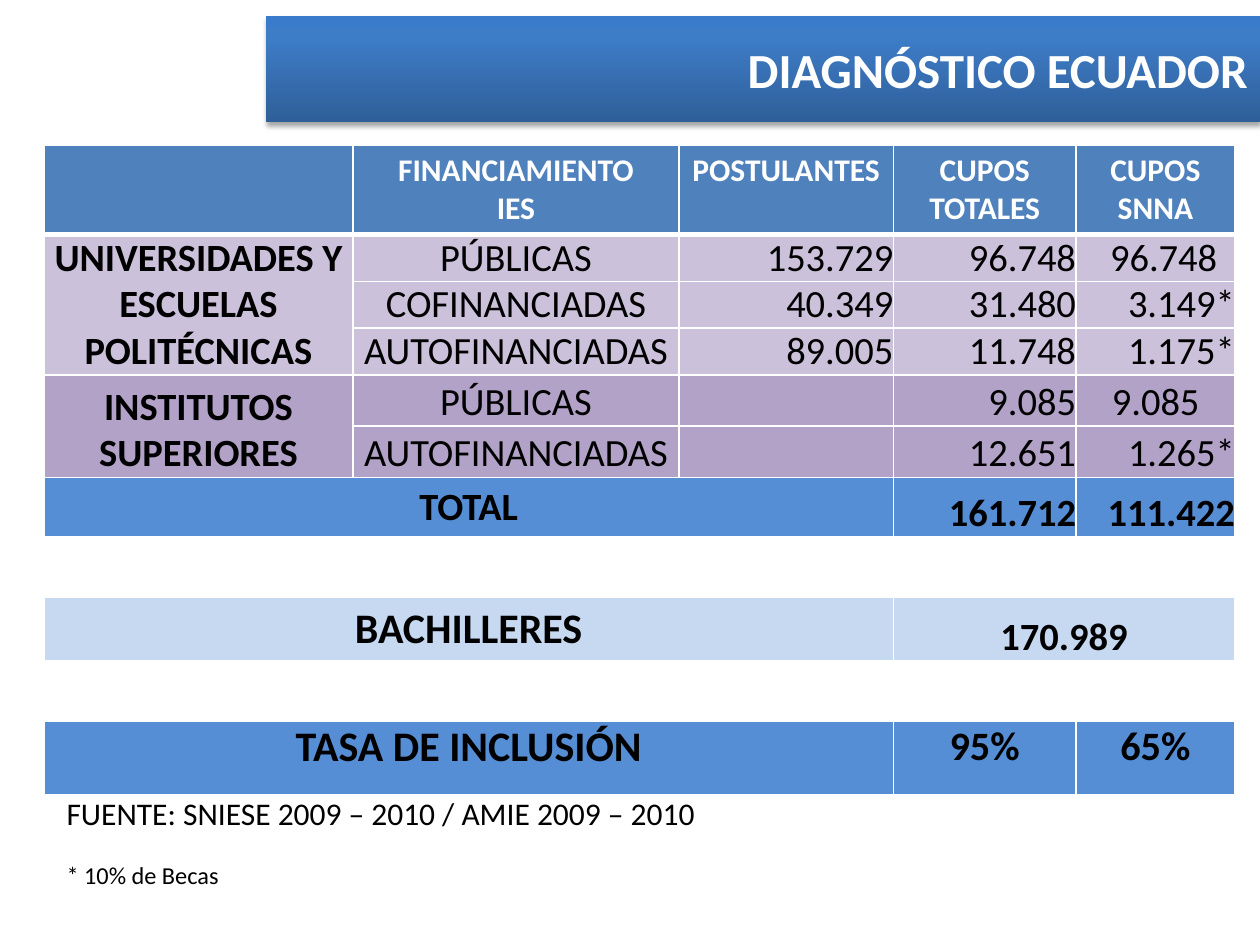
from lxml.etree import SubElement
from pptx import Presentation
from pptx.dml.color import RGBColor
from pptx.enum.shapes import MSO_SHAPE as Shape
from pptx.enum.text import MSO_ANCHOR as Anchor, PP_ALIGN as Align
from pptx.oxml import parse_xml
from pptx.oxml.ns import nsdecls, qn
from pptx.util import Inches, Pt

COLORS = {
    "white": "FFFFFF", "black": "000000", "header": "4F81BD",
    "university": "CCC1DA", "institute": "B3A2C7",
    "total": "558ED5", "graduates": "C6D9F1",
    "banner_dark": "2F5F99", "banner_mid": "3D7CC7", "banner_light": "3A7CCB",
}
COLUMN_WIDTHS = [2.45, 2.59, 1.7, 1.45, 1.26]
# Height, fill and cell texts of each row
ROWS = [
    (0.69, "header", ["", "FINANCIAMIENTO\nIES", "POSTULANTES", "CUPOS TOTALES", "CUPOS SNNA"]),
    (0.37, "university", ["UNIVERSIDADES Y ESCUELAS POLITÉCNICAS", "PÚBLICAS",
                          "153.729", "96.748", "96.748"]),
    (0.37, "university", ["", "COFINANCIADAS", "40.349", "31.480", "3.149*"]),
    (0.37, "university", ["", "AUTOFINANCIADAS", "89.005", "11.748", "1.175*"]),
    (0.37, "institute", ["INSTITUTOS SUPERIORES", "PÚBLICAS", "", "9.085", "9.085"]),
    (0.37, "institute", ["", "AUTOFINANCIADAS", "", "12.651", "1.265*"]),
    (0.46, "total", ["TOTAL", "", "", "161.712", "111.422"]),
    (0.48, "white", [""] * 5),
    (0.5, "graduates", ["BACHILLERES", "", "", "170.989", ""]),
    (0.48, None, [""] * 5),
    (0.58, "total", ["TASA DE INCLUSIÓN", "", "", "95%", "65%"]),
]
HEADER, TOTAL, GRADUATES, RATE = 0, 6, 8, 10
MERGES = [((1, 0), (3, 0)), ((4, 0), (5, 0)), ((TOTAL, 0), (TOTAL, 2)),
          ((GRADUATES, 0), (GRADUATES, 2)), ((GRADUATES, 3), (GRADUATES, 4)),
          ((RATE, 0), (RATE, 2))]
# Right insets that pull values without an asterisk away from the edge
RIGHT_INSETS = {(1, 4): 0.14, (4, 4): 0.28}


def rgb(name):
    return RGBColor.from_string(COLORS[name])


def write(para, text, size=18, color="black", bold=False, align=None, baseline=None):
    para.alignment = align
    span = para.add_run()
    span.text = text
    span.font.name = "Calibri"
    span.font.size = Pt(size)
    span.font.bold = bold
    span.font.color.rgb = rgb(color)
    if baseline is not None:
        span._r.get_or_add_rPr().set("baseline", str(baseline * 1000))


def write_lines(frame, text, **style):
    for index, line in enumerate(text.split("\n")):
        para = frame.add_paragraph() if index else frame.paragraphs[0]
        write(para, line, **style)


def add_borders(cell, top, bottom):
    """Draw white cell borders; top and bottom are widths in points."""
    properties = cell._tc.get_or_add_tcPr()
    for side, width in (("L", 1), ("R", 1), ("T", top), ("B", bottom)):
        line = SubElement(properties, qn(f"a:ln{side}"), w=str(Pt(width)))
        fill = SubElement(line, qn("a:solidFill"))
        SubElement(fill, qn("a:srgbClr"), val=COLORS["white"])


def cell_style(row, column):
    if row == HEADER:
        return {"size": 18, "color": "white", "bold": True, "align": Align.CENTER}
    centered = column < 2 or row in (GRADUATES, RATE)
    size = 22
    if row in (GRADUATES, RATE) and column == 0:
        size = 24
    elif row == RATE:
        size = 23
    return {"size": size, "bold": column == 0 or row >= TOTAL,
            "align": Align.CENTER if centered else Align.RIGHT}


def format_cell(cell, row, column, fill, text):
    add_borders(cell, top=3 if row == 1 else 1, bottom=3 if row == HEADER else 1)
    if fill:
        cell.fill.solid()
        cell.fill.fore_color.rgb = rgb(fill)
    else:
        cell.fill.background()
    padded = row == HEADER or (row in (TOTAL, GRADUATES) and column == 0)
    if text and not padded:
        cell.margin_left = cell.margin_top = cell.margin_bottom = 0
        cell.margin_right = Inches(RIGHT_INSETS.get((row, column), 0))
        cell.vertical_anchor = Anchor.TOP if row == RATE else Anchor.BOTTOM
    if text:
        write_lines(cell.text_frame, text, **cell_style(row, column))


def add_places_table(page):
    frame = page.shapes.add_table(
        len(ROWS), len(COLUMN_WIDTHS), Inches(0.35), Inches(1.15),
        Inches(sum(COLUMN_WIDTHS)), Inches(sum(row[0] for row in ROWS)))
    table = frame.table
    table.first_row = table.horz_banding = False
    for column, width in zip(table.columns, COLUMN_WIDTHS):
        column.width = Inches(width)
    for row, (height, fill, texts) in enumerate(ROWS):
        table.rows[row].height = Inches(height)
        for column, text in enumerate(texts):
            format_cell(table.cell(row, column), row, column, fill, text)
    for first, last in MERGES:
        table.cell(*first).merge(table.cell(*last))


def add_banner(page, text):
    banner = page.shapes.add_shape(
        Shape.ACTION_BUTTON_CUSTOM, Inches(2.11), Inches(0.13), Inches(7.89), Inches(0.84))
    banner.line.fill.background()
    banner.fill.gradient()
    properties = banner._element.spPr
    stops = "".join(
        f'<a:gs pos="{position * 1000}"><a:srgbClr val="{COLORS[name]}"/></a:gs>'
        for position, name in ((0, "banner_dark"), (80, "banner_mid"), (100, "banner_light")))
    properties.replace(properties.find(qn("a:gradFill")), parse_xml(
        f'<a:gradFill {nsdecls("a")} rotWithShape="1"><a:gsLst>{stops}</a:gsLst>'
        '<a:lin ang="16200000" scaled="0"/></a:gradFill>'))
    banner.shadow.inherit = False
    properties.find(qn("a:effectLst")).append(parse_xml(
        f'<a:outerShdw {nsdecls("a")} blurRad="{Pt(3.1)}" dist="{Pt(1.8)}" dir="5400000" '
        f'rotWithShape="0"><a:srgbClr val="{COLORS["black"]}"><a:alpha val="35000"/>'
        '</a:srgbClr></a:outerShdw>'))
    banner.text_frame.vertical_anchor = Anchor.MIDDLE
    write_lines(banner.text_frame, text, size=28, color="white", bold=True, align=Align.RIGHT)


def add_source_note(page):
    box = page.shapes.add_textbox(Inches(0.43), Inches(6.25), Inches(5.2), Inches(0.81))
    frame = box.text_frame
    frame.word_wrap = True
    write(frame.paragraphs[0], "FUENTE: SNIESE 2009 – 2010 / AMIE 2009 – 2010")
    write(frame.add_paragraph(), "* 10% de Becas", size=24, baseline=-25)


def main():
    deck = Presentation()
    deck.slide_width, deck.slide_height = Inches(10), Inches(7.5)
    page = deck.slides.add_slide(deck.slide_layouts[6])
    add_places_table(page)
    add_banner(page, "DIAGNÓSTICO ECUADOR")
    add_source_note(page)
    deck.save("out.pptx")


if __name__ == "__main__":
    main()
